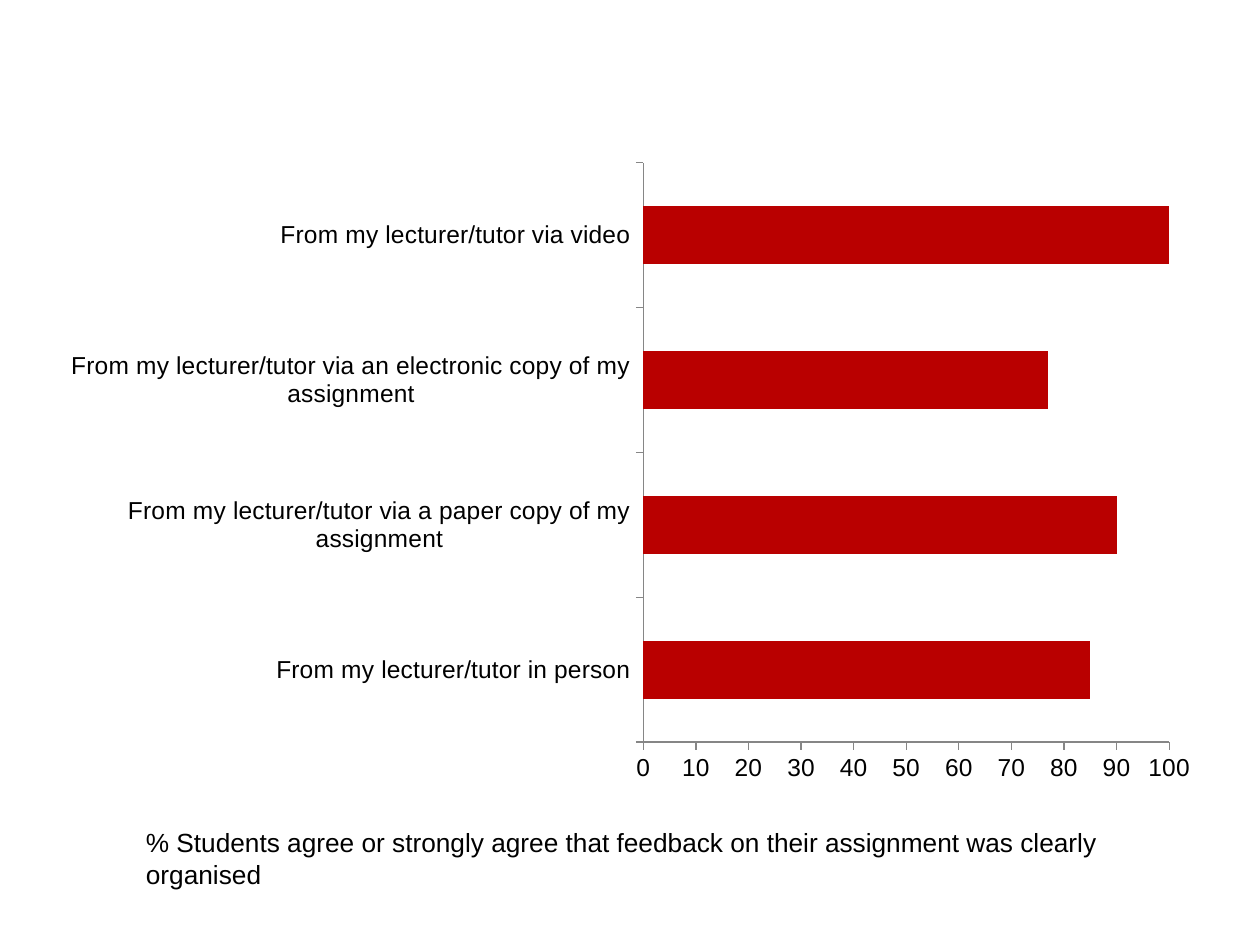
from pptx import Presentation
from pptx.chart.data import CategoryChartData
from pptx.dml.color import RGBColor
from pptx.enum.chart import XL_CHART_TYPE, XL_TICK_MARK
from pptx.util import Inches, Pt

BAR_CLUSTERED = XL_CHART_TYPE.BAR_CLUSTERED
OUTSIDE = XL_TICK_MARK.OUTSIDE

FONT, BLACK, RED, GREY = "Arial", "000000", "B90000", "868686"
AGREEMENT = {
    "From my lecturer/tutor in person": 85,
    "From my lecturer/tutor via a paper copy of my assignment": 90,
    "From my lecturer/tutor via an electronic copy of my assignment": 77,
    "From my lecturer/tutor via video": 100,
}
CAPTION = "% Students agree or strongly agree that feedback on their assignment was clearly organised"


def paint(color_format, color):
    color_format.rgb = RGBColor.from_string(color)


def style_font(font, size):
    font.name, font.size = FONT, Pt(size)
    paint(font.color, BLACK)


def add_agreement_chart(slide):
    data = CategoryChartData()
    data.categories = list(AGREEMENT)
    data.add_series("Series 1", list(AGREEMENT.values()))
    chart = slide.shapes.add_chart(
        BAR_CLUSTERED, Inches(0.38), Inches(1.19), Inches(9.25), Inches(5.12), data
    ).chart
    chart.has_legend = chart.has_title = False
    style_font(chart.font, 14)

    for axis in (chart.category_axis, chart.value_axis):
        axis.has_major_gridlines = False
        axis.major_tick_mark = OUTSIDE
        paint(axis.format.line.color, GREY)
        axis.format.line.width = Pt(0.75)
    chart.value_axis.minimum_scale = 0
    chart.value_axis.maximum_scale = 100
    chart.value_axis.major_unit = 10

    bars = chart.plots[0]
    bars.vary_by_categories = False
    bars.gap_width = 150
    fill = bars.series[0].format.fill
    fill.solid()
    paint(fill.fore_color, RED)


def add_caption(slide):
    caption = slide.shapes.add_textbox(Inches(1.06), Inches(6.51), Inches(8.43), Inches(0.61))
    caption.text_frame.word_wrap = True
    caption.text_frame.text = CAPTION
    style_font(caption.text_frame.paragraphs[0].runs[0].font, 15)


def main():
    """Build the slide on how clearly assignment feedback was organised."""
    deck = Presentation()
    deck.slide_width, deck.slide_height = Inches(10), Inches(7.5)
    slide = deck.slides.add_slide(deck.slide_layouts[6])
    add_agreement_chart(slide)
    add_caption(slide)
    deck.save("out.pptx")


if __name__ == "__main__":
    main()
